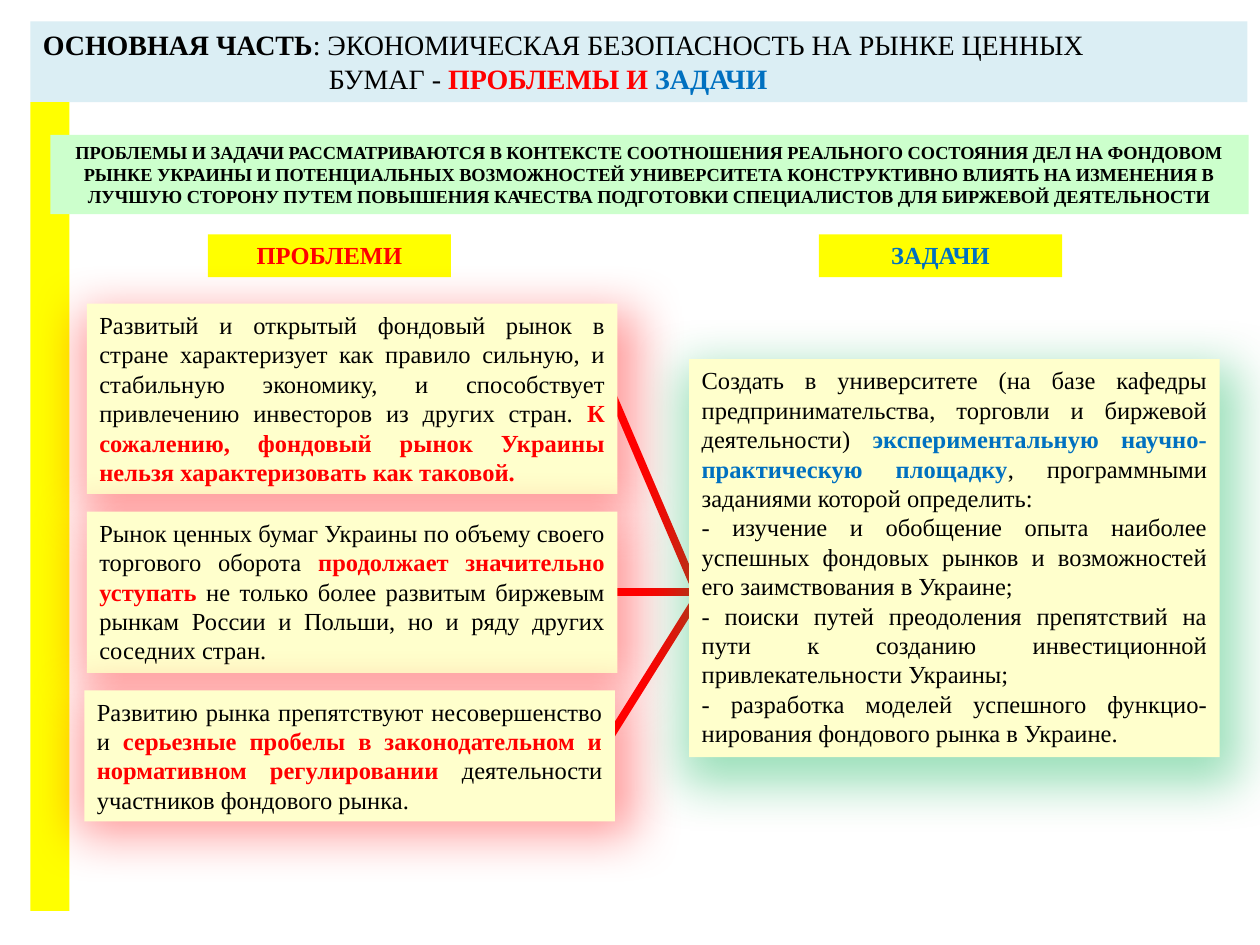
import pptx
import pptx.dml.color
import pptx.enum.shapes
import pptx.enum.text
import pptx.oxml
import pptx.oxml.ns
import pptx.util

Inches = pptx.util.Inches
Pt = pptx.util.Pt
ALIGN = pptx.enum.text.PP_ALIGN
RECT = pptx.enum.shapes.MSO_SHAPE.RECTANGLE
FONT = "Times New Roman"
COLORS = {
    "text": "000000", "problem": "FF0000", "task": "0070C0", "glow": "00B050",
    "title": "DBEEF4", "context": "CCFFCC", "yellow": "FFFF00", "card": "FFFFCC",
}

TITLE = [
    [("ОСНОВНАЯ ЧАСТЬ", "text", True),
     (": ЭКОНОМИЧЕСКАЯ БЕЗОПАСНОСТЬ НА РЫНКЕ ЦЕННЫХ", "text", False)],
    [("БУМАГ - ", "text", False), ("ПРОБЛЕМЫ И ", "problem", True), ("ЗАДАЧИ", "task", True)],
]
CONTEXT = (
    "ПРОБЛЕМЫ И ЗАДАЧИ РАССМАТРИВАЮТСЯ В КОНТЕКСТЕ СООТНОШЕНИЯ РЕАЛЬНОГО СОСТОЯНИЯ ДЕЛ "
    "НА ФОНДОВОМ РЫНКЕ УКРАИНЫ И ПОТЕНЦИАЛЬНЫХ ВОЗМОЖНОСТЕЙ УНИВЕРСИТЕТА КОНСТРУКТИВНО "
    "ВЛИЯТЬ НА ИЗМЕНЕНИЯ В ЛУЧШУЮ СТОРОНУ ПУТЕМ ПОВЫШЕНИЯ КАЧЕСТВА ПОДГОТОВКИ СПЕЦИАЛИСТОВ "
    "ДЛЯ БИРЖЕВОЙ ДЕЯТЕЛЬНОСТИ"
)
PROBLEMS = [
    ((0, 0, 4.21, 1.51), [
        ("Развитый и открытый фондовый рынок в стране характеризует как правило сильную, и "
         "стабильную экономику, и способствует привлечению инвесторов из других стран. ", "text", False),
        ("К сожалению, фондовый рынок Украины нельзя характеризовать как таковой.", "problem", True)]),
    ((0, 1.65, 4.21, 1.28), [
        ("Рынок ценных бумаг Украины по объему своего торгового оборота ", "text", False),
        ("продолжает значительно уступать", "problem", True),
        (" не только более развитым биржевым рынкам России и Польши, но и ряду других "
         "соседних стран.", "text", False)]),
    ((-0.02, 3.07, 4.21, 1.04), [
        ("Развитию рынка препятствуют несовершенство и ", "text", False),
        ("серьезные пробелы в законодательном и нормативном регулировании", "problem", True),
        (" деятельности участников фондового рынка.", "text", False)]),
]
TASKS = [
    [("Создать в университете (на базе кафедры предпринимательства, торговли и биржевой "
      "деятельности) ", "text", False),
     ("экспериментальную научно-практическую площадку", "task", True),
     (", программными заданиями которой определить:", "text", False)],
    [("- изучение и обобщение опыта наиболее успешных фондовых рынков и возможностей его "
      "заимствования в Украине;", "text", False)],
    [("- поиски путей преодоления препятствий на пути к созданию инвестиционной "
      "привлекательности Украины;", "text", False)],
    [("- разработка моделей успешного функцио-нирования фондового рынка в Украине.", "text", False)],
]
LINKS = [((4.74, 6.01), (5.61, 4.62)), ((4.82, 4.7), (5.61, 4.7)), ((4.82, 3.04), (5.53, 4.7))]


def rgb(name):
    """Return the palette colour called name."""
    return pptx.dml.color.RGBColor.from_string(COLORS[name])


def write(frame, paragraphs, size, align, anchor=pptx.enum.text.MSO_ANCHOR.TOP):
    """Fill a text frame with paragraphs of (text, colour, bold) runs."""
    layout = {
        "word_wrap": True, "vertical_anchor": anchor,
        "auto_size": pptx.enum.text.MSO_AUTO_SIZE.NONE,
        "margin_left": Inches(0.1), "margin_right": Inches(0.1),
        "margin_top": Inches(0.05), "margin_bottom": Inches(0.05),
    }
    for key, value in layout.items():
        setattr(frame, key, value)
    for index, runs in enumerate(paragraphs):
        paragraph = frame.add_paragraph() if index else frame.paragraphs[0]
        spacing = {"alignment": align, "line_spacing": 1.0, "space_before": Pt(0), "space_after": Pt(0)}
        for key, value in spacing.items():
            setattr(paragraph, key, value)
        for text, color, bold in runs:
            run = paragraph.add_run()
            run.text = text
            for key, value in {"name": FONT, "size": Pt(size), "bold": bold}.items():
                setattr(run.font, key, value)
            run.font.color.rgb = rgb(color)


def add_panel(slide, box, fill):
    """Add a plain filled rectangle."""
    panel = slide.shapes.add_shape(RECT, *map(Inches, box))
    panel.shadow.inherit = False
    panel.fill.solid()
    panel.fill.fore_color.rgb = rgb(fill)
    panel.line.fill.background()
    return panel


def add_glow(panel, color):
    """Give a panel a soft coloured shadow."""
    effects = panel._element.spPr.find(pptx.oxml.ns.qn("a:effectLst"))
    effects.append(pptx.oxml.parse_xml(
        f'<a:outerShdw {pptx.oxml.ns.nsdecls("a")} blurRad="{Pt(29)}" dist="{Pt(6)}" '
        f'dir="{136 * 60000}" sx="105000" sy="105000" algn="tl" rotWithShape="0">'
        f'<a:srgbClr val="{COLORS[color]}"><a:alpha val="40000"/></a:srgbClr></a:outerShdw>'))


def add_title(slide, box):
    """Place the title band with its indented second line."""
    title = slide.shapes.title
    for key, value in zip(("left", "top", "width", "height"), box):
        setattr(title, key, Inches(value))
    title.fill.solid()
    title.fill.fore_color.rgb = rgb("title")
    write(title.text_frame, TITLE, 16, ALIGN.LEFT)
    title.text_frame.paragraphs[1]._p.get_or_add_pPr().set("marL", str(Inches(2.27)))


def add_heading(slide, box, text, color):
    """Place a yellow column heading."""
    heading = add_panel(slide, box, "yellow")
    write(heading.text_frame, [[(text, color, True)]], 14, ALIGN.CENTER)


def add_card(slide, box, paragraphs, glow):
    """Place a justified text card with a glow."""
    card = add_panel(slide, box, "card")
    add_glow(card, glow)
    write(card.text_frame, paragraphs, 14, ALIGN.JUSTIFY)


def add_links(slide):
    """Join the problem cards to the task card."""
    for start, end in LINKS:
        link = slide.shapes.add_connector(
            pptx.enum.shapes.MSO_CONNECTOR.STRAIGHT, *map(Inches, start + end))
        link.line.color.rgb = rgb("problem")
        link.line.width = Pt(4.5)
        link._element.spPr.append(
            pptx.oxml.parse_xml(f'<a:effectLst {pptx.oxml.ns.nsdecls("a")}/>'))


def add_problems(slide, left, top):
    """Place the problems column from its first card's corner."""
    add_heading(slide, (left + 0.96, top - 0.55, 1.93, 0.34), "ПРОБЛЕМИ", "problem")
    for (dx, dy, width, height), runs in PROBLEMS:
        add_card(slide, (left + dx, top + dy, width, height), [runs], "problem")


def add_tasks(slide, left, top):
    """Place the tasks column from its card's corner."""
    add_heading(slide, (left + 1.03, top - 0.99, 1.93, 0.34), "ЗАДАЧИ", "task")
    add_card(slide, (left, top, 4.21, 3.16), TASKS, "glow")


def main():
    """Build and save the slide."""
    deck = pptx.Presentation()
    deck.slide_width, deck.slide_height = Inches(10), Inches(7.5)
    slide = deck.slides.add_slide(deck.slide_layouts.get_by_name("Title Only"))
    add_title(slide, (0.24, 0.17, 9.66, 0.64))
    add_panel(slide, (0.24, 0.81, 0.31, 6.42), "yellow")
    context = add_panel(slide, (0.4, 1.07, 9.51, 0.63), "context")
    write(context.text_frame, [[(CONTEXT, "text", True)]], 10.5, ALIGN.CENTER)
    add_links(slide)
    add_problems(slide, 0.69, 2.41)
    add_tasks(slide, 5.47, 2.85)
    deck.save("out.pptx")


if __name__ == "__main__":
    main()
